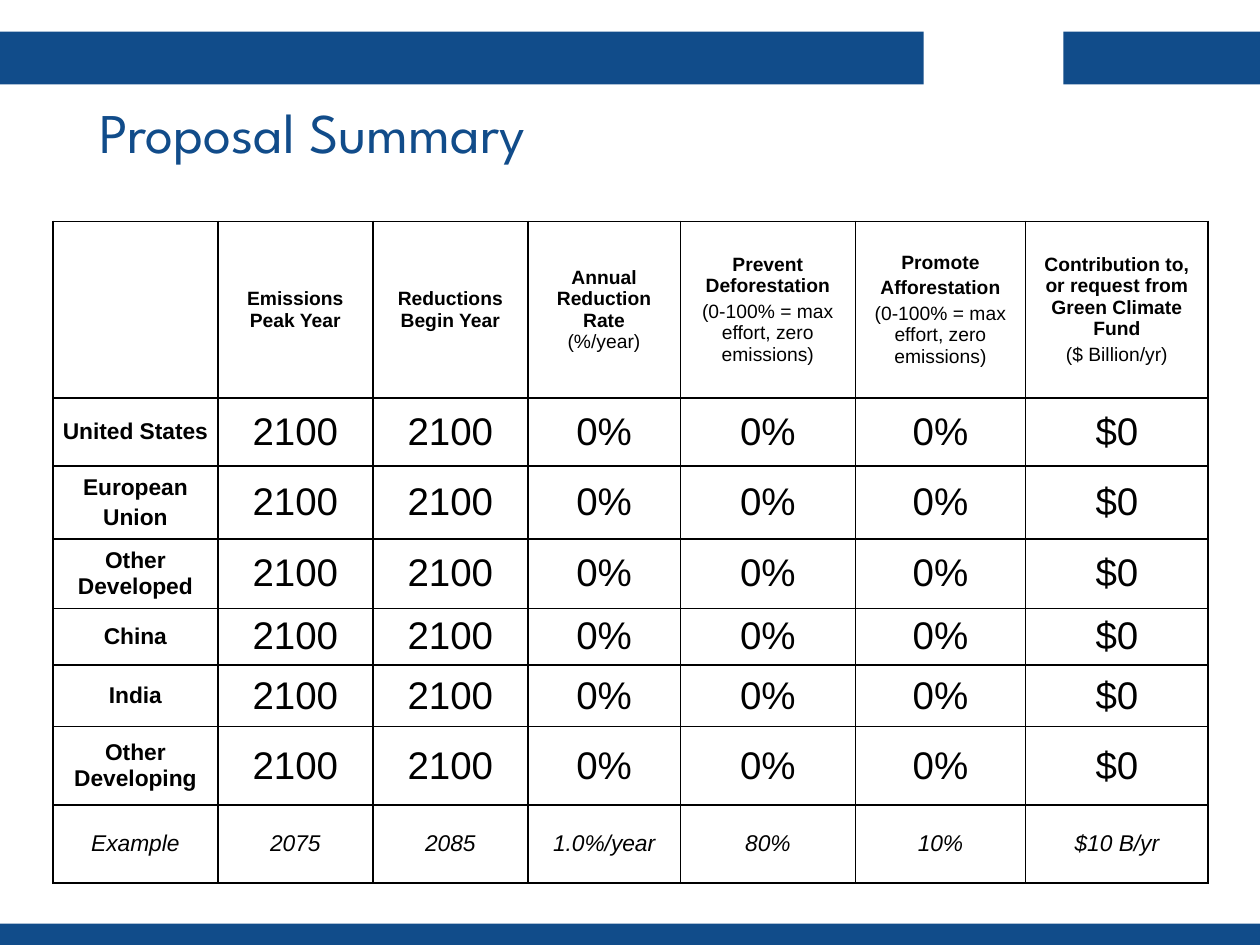
from dataclasses import dataclass

from lxml import etree
from pptx import Presentation
from pptx.dml.color import RGBColor
from pptx.enum import shapes, text
from pptx.oxml import ns
from pptx.util import Pt

BLUE = RGBColor(0x11, 0x4C, 0x8A)
BLACK = RGBColor(0, 0, 0)
WHITE = RGBColor(0xFF, 0xFF, 0xFF)


@dataclass
class Bar:
    left: float
    top: float
    width: float
    height: float


@dataclass
class Line:
    content: str
    size: float
    bold: bool = False
    italic: bool = False
    spaced: bool = True
    plain_ending: bool = False


BARS = [
    Bar(0, 18, 527.8, 30.2),
    Bar(607.7, 18, 112.3, 30.2),
    Bar(0, 527.8, 720, 12.2),
]
COLUMN_WIDTHS = [94.3, 88.6, 88.6, 87.1, 100.1, 97.2, 104.4]
ROW_HEIGHTS = [100.8, 38.9, 41.8, 39.6, 32.4, 35.3, 44.6, 44.6]
REGIONS = [
    ["United States"],
    ["European", "Union"],
    ["Other Developed"],
    ["China"],
    ["India"],
    ["Other Developing"],
]
PROPOSAL = ["2100", "2100", "0%", "0%", "0%", "$0"]
EXAMPLE = ["2075", "2085", "1.0%/year", "80%", "10%", "$10 B/yr"]
EFFORT_SCALE = "(0-100% = max effort, zero emissions)"


def heading(*titles: str, unit: str = "") -> list[Line]:
    lines = [Line(title, 11, bold=True) for title in titles]
    return lines + [Line(unit, 11)] if unit else lines


HEADINGS = [
    [],
    heading("Emissions Peak Year"),
    heading("Reductions Begin Year"),
    [Line("Annual Reduction Rate\v(%/year)", 11, bold=True, plain_ending=True)],
    heading("Prevent Deforestation", unit=EFFORT_SCALE),
    heading("Promote", "Afforestation", unit=EFFORT_SCALE),
    heading("Contribution to, or request from Green Climate Fund", unit="($ Billion/yr)"),
]


def summary_rows() -> list[list[list[Line]]]:
    proposals = [
        [[Line(name, 13, bold=True) for name in region]]
        + [[Line(value, 22, spaced=False)] for value in PROPOSAL]
        for region in REGIONS
    ]
    example = [[Line("Example", 13, italic=True)]] + [
        [Line(value, 13, italic=True, spaced=False)] for value in EXAMPLE
    ]
    return [HEADINGS, *proposals, example]


def draw_bar(slide, bar: Bar) -> None:
    band = slide.shapes.add_shape(
        shapes.MSO_SHAPE.RECTANGLE, Pt(bar.left), Pt(bar.top), Pt(bar.width), Pt(bar.height)
    )
    band.shadow.inherit = False
    band.fill.solid()
    band.fill.fore_color.rgb = BLUE
    band.line.fill.background()


def draw_title(slide) -> None:
    title = slide.shapes.add_textbox(Pt(49.7), Pt(52.6), Pt(620.6), Pt(49)).text_frame
    title.word_wrap = True
    title.vertical_anchor = text.MSO_ANCHOR.MIDDLE
    title.text = "Proposal Summary"
    title.paragraphs[0].line_spacing = 0.9
    font = title.paragraphs[0].runs[0].font
    font.name, font.size, font.color.rgb = "League Spartan", Pt(32), BLUE


def draw_borders(cell) -> None:
    properties = cell._tc.get_or_add_tcPr()
    for side in ("lnL", "lnR", "lnT", "lnB"):
        border = etree.SubElement(properties, ns.qn(f"a:{side}"), w=str(Pt(1)))
        fill = etree.SubElement(border, ns.qn("a:solidFill"))
        etree.SubElement(fill, ns.qn("a:srgbClr"), val=str(BLACK))


def write_line(paragraph, line: Line) -> None:
    paragraph.text = line.content
    paragraph.alignment = text.PP_ALIGN.CENTER
    if line.spaced:
        paragraph.space_before = Pt(line.size * 0.2)
    for run in paragraph.runs:
        font = run.font
        font.name, font.size, font.color.rgb = "Arial", Pt(line.size), BLACK
        font.bold, font.italic = line.bold, line.italic
    if line.plain_ending:
        paragraph.runs[-1].font.bold = False
    for line_break in paragraph._p.findall(ns.qn("a:br")):
        etree.SubElement(line_break, ns.qn("a:rPr"), sz=str(int(line.size * 100)))


def fill_cell(cell, lines: list[Line]) -> None:
    draw_borders(cell)
    cell.fill.solid()
    cell.fill.fore_color.rgb = WHITE
    cell.vertical_anchor = text.MSO_ANCHOR.MIDDLE
    cell.margin_left = cell.margin_right = Pt(5.4)
    cell.margin_top = cell.margin_bottom = Pt(2.9)
    frame = cell.text_frame
    for index, line in enumerate(lines):
        write_line(frame.add_paragraph() if index else frame.paragraphs[0], line)


def draw_summary(slide) -> None:
    summary = slide.shapes.add_table(
        len(ROW_HEIGHTS), len(COLUMN_WIDTHS), Pt(30.2), Pt(126.5),
        Pt(sum(COLUMN_WIDTHS)), Pt(sum(ROW_HEIGHTS)),
    ).table
    for column, width in zip(summary.columns, COLUMN_WIDTHS):
        column.width = Pt(width)
    for row, height, contents in zip(summary.rows, ROW_HEIGHTS, summary_rows()):
        row.height = Pt(height)
        for cell, lines in zip(row.cells, contents):
            fill_cell(cell, lines)


def main() -> None:
    deck = Presentation()
    deck.slide_width, deck.slide_height = Pt(720), Pt(540)
    slide = deck.slides.add_slide(deck.slide_layouts[6])
    for bar in BARS:
        draw_bar(slide, bar)
    draw_summary(slide)
    draw_title(slide)
    deck.save("out.pptx")


if __name__ == "__main__":
    main()
